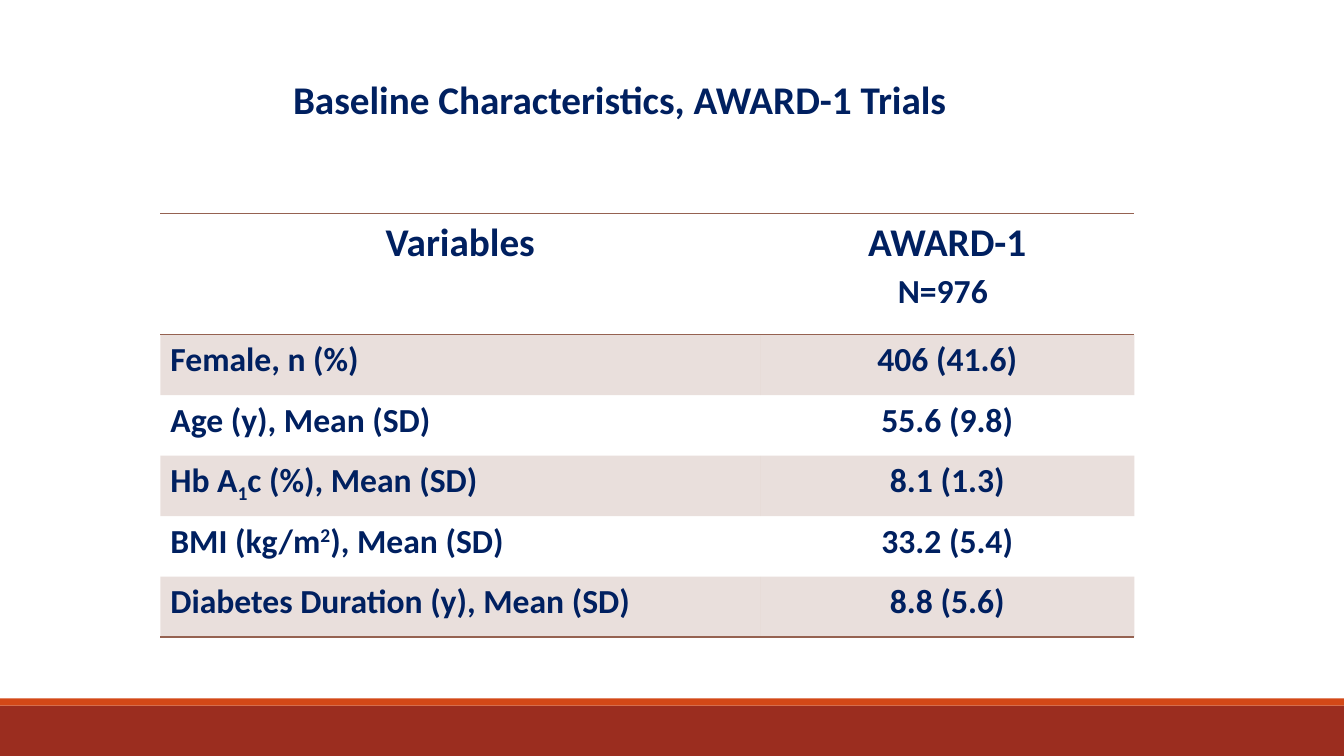
from dataclasses import dataclass

from lxml.etree import SubElement
from pptx import Presentation
from pptx.dml.color import RGBColor
from pptx.enum.shapes import MSO_SHAPE
from pptx.enum.text import MSO_ANCHOR, PP_ALIGN
from pptx.oxml.ns import qn
from pptx.slide import Slide
from pptx.table import Table, _Cell
from pptx.text.text import TextFrame
from pptx.util import Inches, Pt

COLORS = {"navy": "002060", "rule": "956251", "brick": "9B2D1F", "orange": "D34817"}
FONT = "Calibri"
PLAIN_TABLE_STYLE = "{2D5ABB26-0587-4C30-8999-92F81FD0307C}"
SLIDE_WIDTH, SLIDE_HEIGHT = Inches(13.33), Inches(7.5)
ROW_HEIGHT = Inches(0.6)
HEADER_ROW_UNITS = 2
VARIABLE_SHARE, VALUE_SHARE = 5.95 / 13.33, 3.71 / 13.33


@dataclass(frozen=True)
class Piece:
    text: str
    size: int = 24
    baseline: int = 0


@dataclass(frozen=True)
class Characteristic:
    variable: list[Piece]
    value: str


@dataclass(frozen=True)
class FooterBand:
    top: float
    height: float
    color: str


HEADER_VARIABLE = [[Piece("Variables", 28)]]
HEADER_TRIAL = [[Piece("AWARD-1", 28)], [Piece("N=976"), Piece(" ", 28)]]
CHARACTERISTICS = [
    Characteristic([Piece("Female, n (%)")], "406 (41.6)"),
    Characteristic([Piece("Age (y), Mean (SD)")], "55.6 (9.8)"),
    Characteristic(
        [Piece("Hb A"), Piece("1", baseline=-25), Piece("c (%), Mean (SD)")], "8.1 (1.3)"
    ),
    Characteristic(
        [Piece("BMI (kg/m"), Piece("2", baseline=30), Piece("), Mean (SD)")], "33.2 (5.4)"
    ),
    Characteristic([Piece("Diabetes Duration (y), Mean (SD)")], "8.8 (5.6)"),
]
FOOTER_BANDS = [
    FooterBand(7 / 7.5, 0.5 / 7.5, "brick"),
    FooterBand(6.93 / 7.5, 0.07 / 7.5, "orange"),
]


def rgb(name: str) -> RGBColor:
    return RGBColor.from_string(COLORS[name])


def across(share: float) -> int:
    return round(SLIDE_WIDTH * share)


def down(share: float) -> int:
    return round(SLIDE_HEIGHT * share)


def write(frame: TextFrame, lines: list[list[Piece]], alignment: PP_ALIGN) -> None:
    for index, pieces in enumerate(lines):
        paragraph = frame.add_paragraph() if index else frame.paragraphs[0]
        paragraph.alignment = alignment
        for piece in pieces:
            run = paragraph.add_run()
            run.text = piece.text
            run.font.name = FONT
            run.font.size = Pt(piece.size)
            run.font.bold = True
            run.font.color.rgb = rgb("navy")
            if piece.baseline:
                run.font._element.set("baseline", str(piece.baseline * 1000))


def rule(cell: _Cell, sides: list[str]) -> None:
    properties = cell._tc.get_or_add_tcPr()
    for side in sides:
        line = SubElement(properties, qn(f"a:ln{side}"), w=str(Pt(1)))
        fill = SubElement(line, qn("a:solidFill"))
        SubElement(fill, qn("a:srgbClr"), val=COLORS["rule"])


def shade(cell: _Cell, shaded: bool) -> None:
    if not shaded:
        cell.fill.background()
        return
    cell.fill.solid()
    cell.fill.fore_color.rgb = rgb("rule")
    tint = cell._tc.tcPr.find(f"{qn('a:solidFill')}/{qn('a:srgbClr')}")
    SubElement(tint, qn("a:alpha"), val="20000")


def fill_row(table: Table, row: int, variable: list[list[Piece]],
             value: list[list[Piece]], alignment: PP_ALIGN, sides: list[str]) -> None:
    cells = [(variable, alignment), (value, PP_ALIGN.CENTER)]
    for column, (lines, cell_alignment) in enumerate(cells):
        cell = table.cell(row, column)
        write(cell.text_frame, lines, cell_alignment)
        rule(cell, sides)
        shade(cell, row % 2 == 1)


def add_footer_band(slide: Slide, band: FooterBand) -> None:
    bar = slide.shapes.add_shape(
        MSO_SHAPE.RECTANGLE, 0, down(band.top), SLIDE_WIDTH, down(band.height)
    )
    bar.shadow.inherit = False
    bar.fill.solid()
    bar.fill.fore_color.rgb = rgb(band.color)
    bar.line.fill.background()


def add_title(slide: Slide) -> None:
    title = slide.shapes.title
    title.left, title.top = across(2.09 / 13.33), down(0.7 / 7.5)
    title.width, title.height = across(8.11 / 13.33), down(0.57 / 7.5)
    title.text_frame.vertical_anchor = MSO_ANCHOR.TOP
    heading = [[Piece("Baseline Characteristics, AWARD-1 Trials", 28)]]
    write(title.text_frame, heading, PP_ALIGN.CENTER)


def add_baseline_table(slide: Slide) -> None:
    row_count = len(CHARACTERISTICS) + 1
    frame = slide.shapes.add_table(
        row_count, 2, across(1.59 / 13.33), down(2.12 / 7.5),
        across(VARIABLE_SHARE + VALUE_SHARE),
        ROW_HEIGHT * (len(CHARACTERISTICS) + HEADER_ROW_UNITS),
    )
    table = frame.table
    table.first_row = table.horz_banding = False
    table._tbl.tblPr.find(qn("a:tableStyleId")).text = PLAIN_TABLE_STYLE
    for column, share in zip(table.columns, (VARIABLE_SHARE, VALUE_SHARE)):
        column.width = across(share)
    for index, row in enumerate(table.rows):
        row.height = ROW_HEIGHT * (1 if index else HEADER_ROW_UNITS)
    fill_row(table, 0, HEADER_VARIABLE, HEADER_TRIAL, PP_ALIGN.CENTER, ["T", "B"])
    for index, entry in enumerate(CHARACTERISTICS, start=1):
        sides = ["B"] if index == len(CHARACTERISTICS) else []
        fill_row(table, index, [entry.variable], [[Piece(entry.value)]],
                 PP_ALIGN.LEFT, sides)


def main() -> None:
    presentation = Presentation()
    presentation.slide_width = SLIDE_WIDTH
    presentation.slide_height = SLIDE_HEIGHT
    slide = presentation.slides.add_slide(presentation.slide_layouts[5])
    for band in FOOTER_BANDS:
        add_footer_band(slide, band)
    add_baseline_table(slide)
    add_title(slide)
    presentation.save("out.pptx")


if __name__ == "__main__":
    main()
